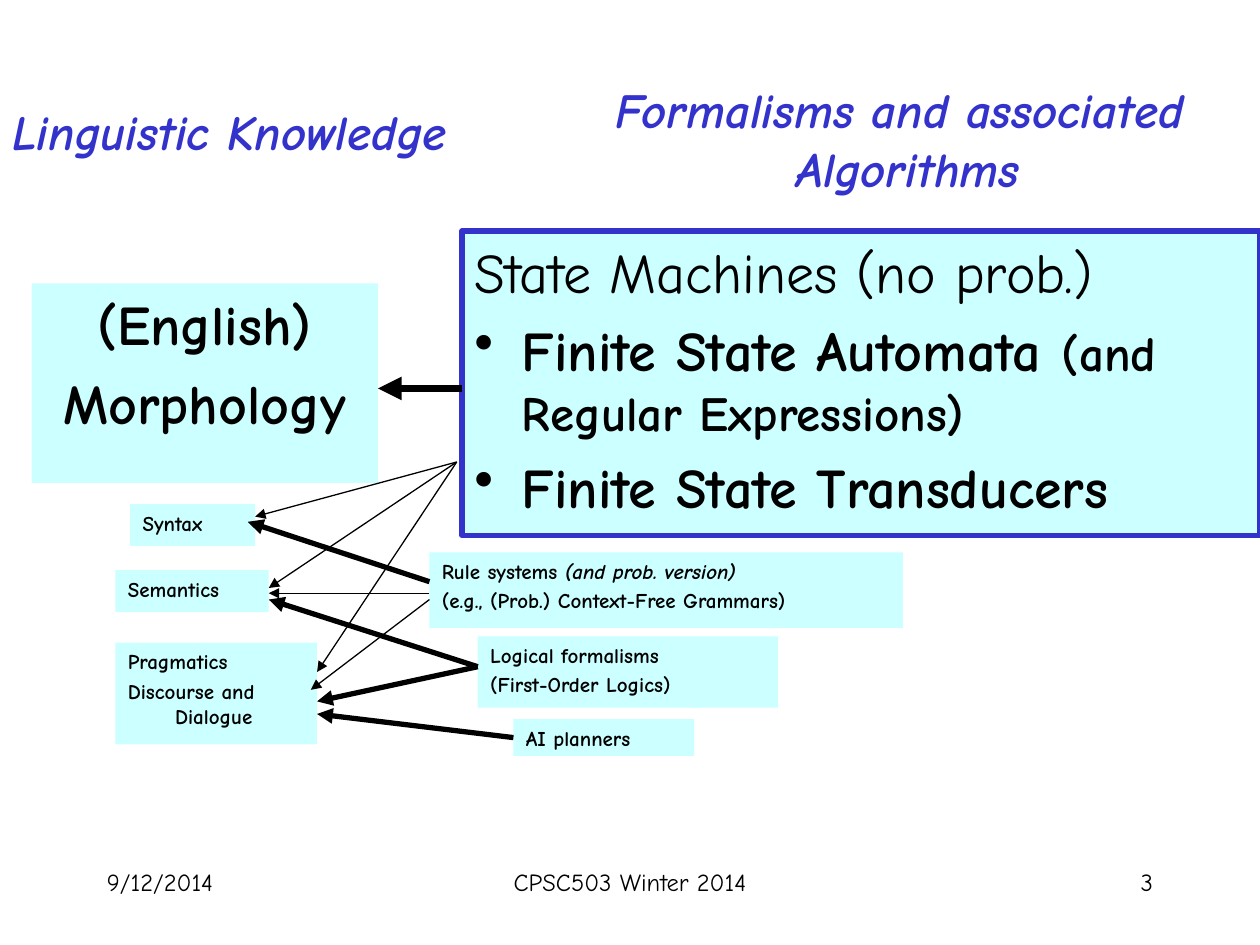
"""Build the slide that links linguistic knowledge to formalisms."""
from dataclasses import dataclass, field

from lxml import etree
from pptx import Presentation
from pptx.dml.color import RGBColor
from pptx.enum.shapes import MSO_CONNECTOR, MSO_SHAPE
from pptx.enum.text import MSO_ANCHOR, PP_ALIGN
from pptx.oxml.ns import qn
from pptx.util import Inches, Pt

LEFT, CENTER, RIGHT = PP_ALIGN.LEFT, PP_ALIGN.CENTER, PP_ALIGN.RIGHT
TOP = MSO_ANCHOR.TOP
RECTANGLE, STRAIGHT = MSO_SHAPE.RECTANGLE, MSO_CONNECTOR.STRAIGHT
LEFT_SIDE = 1
CELL = Inches(10) / 120
HANG = Inches(0.375)


@dataclass(frozen=True)
class Theme:
    """Colours, font and type sizes of the slide."""
    font: str = "Comic Neue"
    ink: RGBColor = RGBColor(0x00, 0x00, 0x00)
    accent: RGBColor = RGBColor(0x33, 0x33, 0xCC)
    panel: RGBColor = RGBColor(0xCC, 0xFF, 0xFF)
    small: int = 12
    footer: int = 14
    heading: int = 28
    large: int = 32
    thin: float = 0.75
    thick: float = 3
    heavy: float = 4.5


THEME = Theme()


@dataclass(frozen=True)
class Span:
    """A run of text and the format values that differ from its box."""
    text: str
    format: dict = field(default_factory=dict)


@dataclass(frozen=True)
class Para:
    """A paragraph made of spans, with or without a bullet."""
    spans: tuple
    bullet: bool = False


@dataclass(frozen=True)
class Box:
    """A text area placed in columns and rows of the grid."""
    place: tuple
    paras: tuple
    size: int = THEME.small
    format: dict = field(default_factory=dict)
    align: PP_ALIGN = LEFT
    panel: bool = False
    outlined: bool = False
    wrap: bool = True


@dataclass(frozen=True)
class Arrow:
    """A straight arrow between two grid points."""
    start: tuple
    end: tuple
    width: float


def cells(*values: float) -> list:
    """Turn grid units into slide lengths."""
    return [round(value * CELL) for value in values]


def lines(*texts: str) -> tuple:
    """Make one plain paragraph of each text."""
    return tuple(Para((Span(text),)) for text in texts)


def panel(place: tuple, *paras: Para, **options) -> Box:
    """Describe a filled box with bold text."""
    return Box(place, paras, panel=True, format={"bold": True}, **options)


def write_para(para, content: Para, box: Box, first: bool) -> None:
    """Fill one paragraph with its layout and spans."""
    para.alignment = box.align
    if box.panel:
        properties = para._p.get_or_add_pPr()
        properties.set("marL", str(HANG))
        properties.set("indent", str(-HANG))
        if not first:
            para.space_before = Pt(box.size * 0.2)
        if content.bullet:
            etree.SubElement(properties, qn("a:buChar")).set("char", "•")
    base = {"name": THEME.font, "size": Pt(box.size)}
    for span in content.spans:
        run = para.add_run()
        run.text = span.text
        for name, value in {**base, **box.format, **span.format}.items():
            setattr(run.font, name, value)
        run.font.color.rgb = THEME.ink if box.panel or not box.format else THEME.accent


def draw_box(page, box: Box):
    """Draw a box with its text and return the shape."""
    place = cells(*box.place)
    if box.panel:
        shape = page.shapes.add_shape(RECTANGLE, *place)
        shape.shadow.inherit = False
        shape.fill.solid()
        shape.fill.fore_color.rgb = THEME.panel
        if box.outlined:
            shape.line.color.rgb = THEME.accent
            shape.line.width = Pt(THEME.thick)
        else:
            shape.line.fill.background()
    else:
        shape = page.shapes.add_textbox(*place)
    frame = shape.text_frame
    frame.word_wrap = box.wrap
    frame.vertical_anchor = TOP
    for index, content in enumerate(box.paras):
        para = frame.add_paragraph() if index else frame.paragraphs[0]
        write_para(para, content, box, index == 0)
    return shape


def draw_arrow(page, arrow: Arrow):
    """Draw an arrow with its head at the end point and return it."""
    connector = page.shapes.add_connector(STRAIGHT, *cells(*arrow.start, *arrow.end))
    connector.line.color.rgb = THEME.ink
    connector.line.width = Pt(arrow.width)
    head = etree.SubElement(connector.line._get_or_add_ln(), qn("a:tailEnd"))
    head.set("type", "triangle")
    etree.SubElement(connector._element.spPr, qn("a:effectLst"))
    return connector


FOOTERS = [
    Box((9, 82, 25, 6), lines("9/12/2014"), THEME.footer),
    Box((41, 82, 38, 6), lines("CPSC503 Winter 2014"), THEME.footer, align=CENTER),
    Box((86, 82, 25, 6), lines("3"), THEME.footer, align=RIGHT),
]
TITLE = {"bold": True, "italic": True}
TITLES = [
    Box((0, 9.1, 47.8, 6.8), lines("Linguistic Knowledge"), THEME.heading, TITLE, wrap=False),
    Box((53, 7, 67, 12.4), lines("Formalisms and associated ", "Algorithms"),
        THEME.heading, TITLE, CENTER),
]
STATE_MACHINES = (
    Para((Span("State Machines (no prob.)", {"bold": False}),)),
    Para((Span("Finite State Automata "),
          Span("(and Regular Expressions)", {"size": Pt(THEME.heading)})), True),
    Para((Span("Finite State Transducers"),), True),
)
RULES = (
    Para((Span("Rule systems "), Span("(and prob. version)", {"italic": True}))),
    *lines("(e.g., (Prob.) Context-Free Grammars)"),
)
PANELS = [
    panel((44, 22, 76, 29), *STATE_MACHINES, size=THEME.large, outlined=True),
    panel((3, 27, 33, 19), *lines("(English)", "Morphology"), size=THEME.large, align=CENTER),
    panel((45.5, 60.6, 28.6, 6.8), *lines("Logical formalisms", "(First-Order Logics)")),
    panel((40.9, 52.6, 45.1, 7.2), *RULES),
    panel((12.4, 48, 11.9, 4), *lines("Syntax")),
    panel((11, 61.2, 19.2, 9.7), *lines("Pragmatics", "Discourse and Dialogue")),
    panel((11, 54.3, 14.6, 4), *lines("Semantics")),
]
PLANNERS = panel((48.9, 68.5, 17.2, 3.5), *lines("AI planners"))
PLANNERS_ARROW = Arrow((48.9, 70.25), (30.2, 68), THEME.thick)
MACHINES_POINT, LOGIC_POINT = (43.5, 44), (45.5, 63.5)
ARROWS = [
    Arrow((44, 37), (36, 37), THEME.heavy),
    Arrow((40.9, 55.4), (23.6, 49.7), THEME.thick),
    *(Arrow(LOGIC_POINT, end, THEME.thick) for end in ((25.6, 57.1), (30.2, 66.8))),
    *(Arrow(MACHINES_POINT, end, THEME.thin) for end in ((25.6, 56), (30.2, 64), (24.3, 49.2))),
    Arrow((40.9, 56.5), (25.6, 56.5), THEME.thin),
    Arrow((40.9, 57.1), (29.6, 65.7), THEME.thin),
]


def main() -> None:
    """Build the deck and save it."""
    deck = Presentation()
    deck.slide_width, deck.slide_height = cells(120, 90)
    page = deck.slides.add_slide(deck.slide_layouts[6])
    for box in FOOTERS + PANELS:
        draw_box(page, box)
    for arrow in ARROWS:
        draw_arrow(page, arrow)
    planners = draw_box(page, PLANNERS)
    draw_arrow(page, PLANNERS_ARROW).begin_connect(planners, LEFT_SIDE)
    for box in TITLES:
        draw_box(page, box)
    deck.save("out.pptx")


if __name__ == "__main__":
    main()
